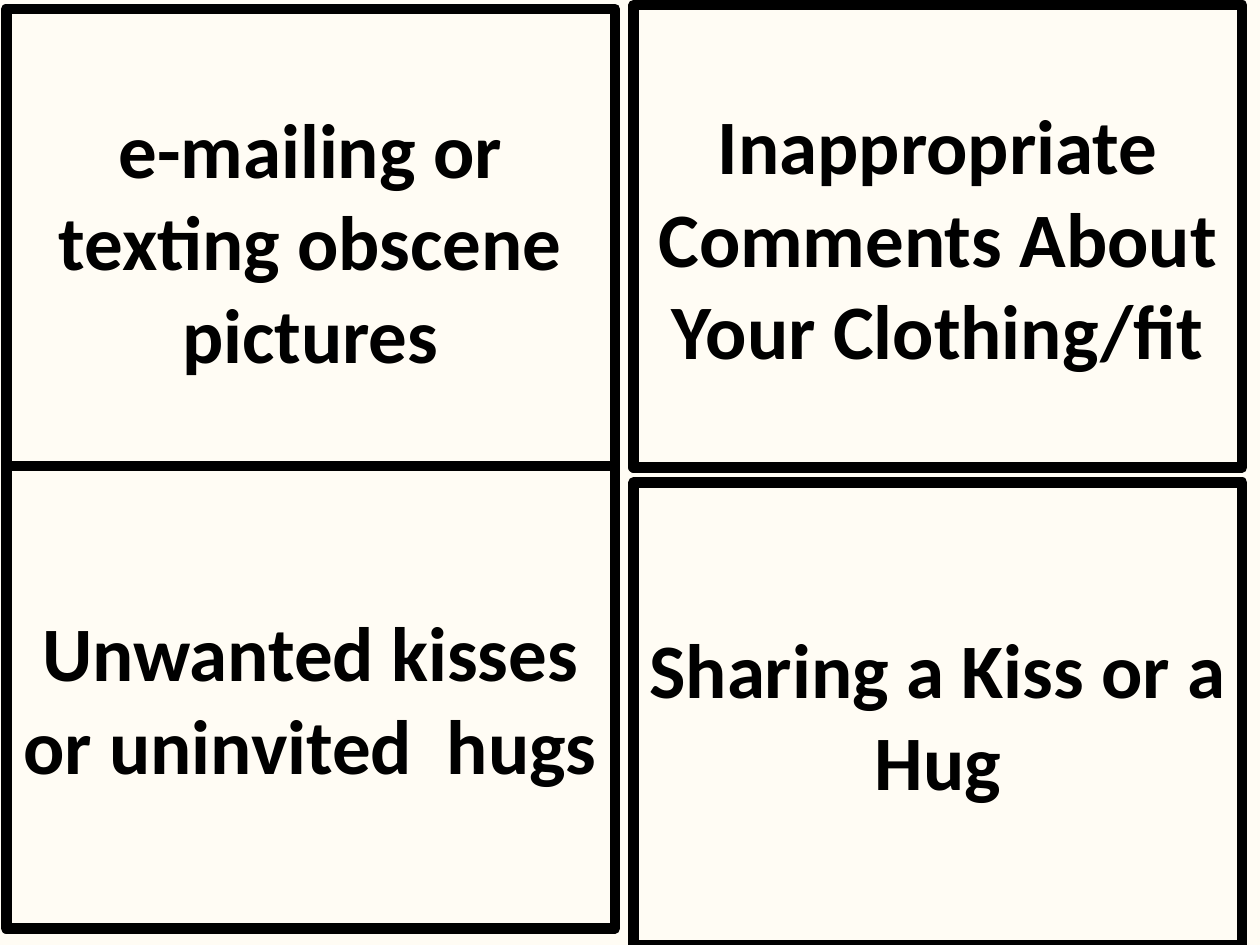
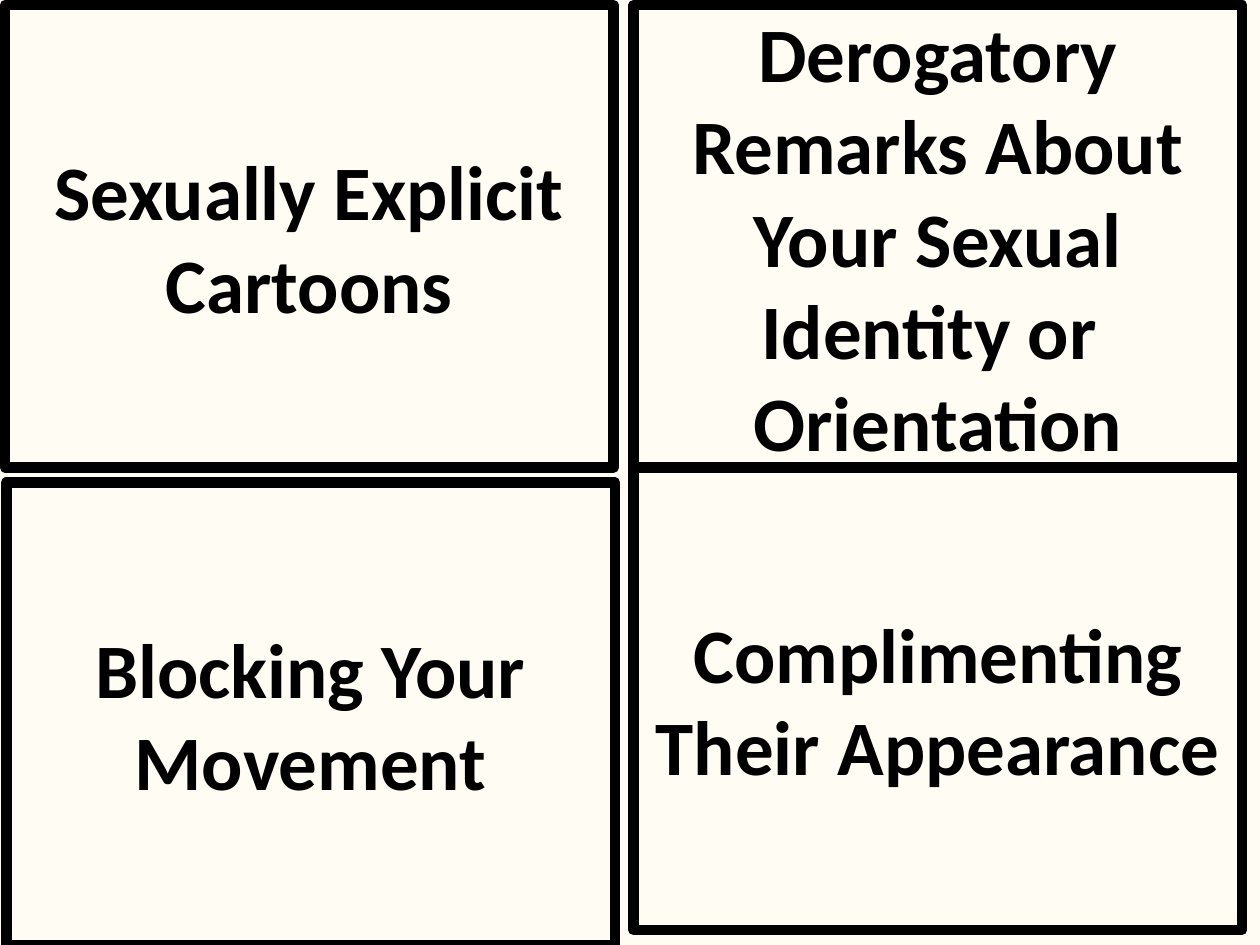
from pptx import Presentation
from pptx.dml.color import RGBColor
from pptx.enum.shapes import MSO_SHAPE as Shape
from pptx.enum.text import MSO_ANCHOR as Anchor, PP_ALIGN as Align
from pptx.util import Pt

# Card grid, in points
LEFT, RIGHT = 3.6, 362.16
TOP, MIDDLE, LOWER = 2.88, 266.4, 275.76
CARD_WIDTH, CARD_HEIGHT = 347.76, 264.24

# Each card: left, top, paragraphs
SLIDES = [
    [
        (LEFT, 5.04, ["e-mailing or texting obscene pictures"]),
        (RIGHT, TOP, ["Inappropriate Comments About Your Clothing/fit"]),
        (LEFT, MIDDLE, ["Unwanted kisses or uninvited  hugs"]),
        (RIGHT, LOWER, ["Sharing a Kiss or a Hug"]),
    ],
    [
        (TOP, TOP, ["Sexually Explicit Cartoons"]),
        (RIGHT, TOP, ["Derogatory Remarks About Your Sexual Identity or ",
                       "Orientation"]),
        (LEFT, LOWER, ["Blocking Your Movement"]),
        (RIGHT, 267.12, ["Complimenting Their Appearance"]),
    ],
]


def color(hex_string):
    return RGBColor.from_string(hex_string)


class CardDeck:
    """Holds the shared style and the current slide."""

    paper = "FFFCF4"
    ink = "000000"
    font = "Calibri"
    font_size = 44
    border = 6

    def __init__(self):
        self.presentation = Presentation()
        self.presentation.slide_width = Pt(720)
        self.presentation.slide_height = Pt(540)
        self.slide = None

    def add_slide(self):
        blank = self.presentation.slide_layouts[6]
        self.slide = self.presentation.slides.add_slide(blank)
        background = self.slide.background.fill
        background.solid()
        background.fore_color.rgb = color(self.paper)

    def add_card(self, left, top, lines):
        shape = self.slide.shapes.add_shape(
            Shape.RECTANGLE, Pt(left), Pt(top), Pt(CARD_WIDTH), Pt(CARD_HEIGHT))
        shape.shadow.inherit = False
        shape.fill.solid()
        shape.fill.fore_color.rgb = color(self.paper)
        shape.line.color.rgb = color(self.ink)
        shape.line.width = Pt(self.border)

        # Centred text
        frame = shape.text_frame
        frame.word_wrap = True
        frame.vertical_anchor = Anchor.MIDDLE
        for index, line in enumerate(lines):
            paragraph = frame.add_paragraph() if index else frame.paragraphs[0]
            paragraph.alignment = Align.CENTER
            self.add_run(paragraph, line)

    def add_run(self, paragraph, text):
        run = paragraph.add_run()
        run.text = text
        run.font.name = self.font
        run.font.size = Pt(self.font_size)
        run.font.bold = True
        run.font.color.rgb = color(self.ink)


def main():
    deck = CardDeck()
    for cards in SLIDES:
        deck.add_slide()
        for left, top, lines in cards:
            deck.add_card(left, top, lines)
    deck.presentation.save("out.pptx")


if __name__ == "__main__":
    main()
